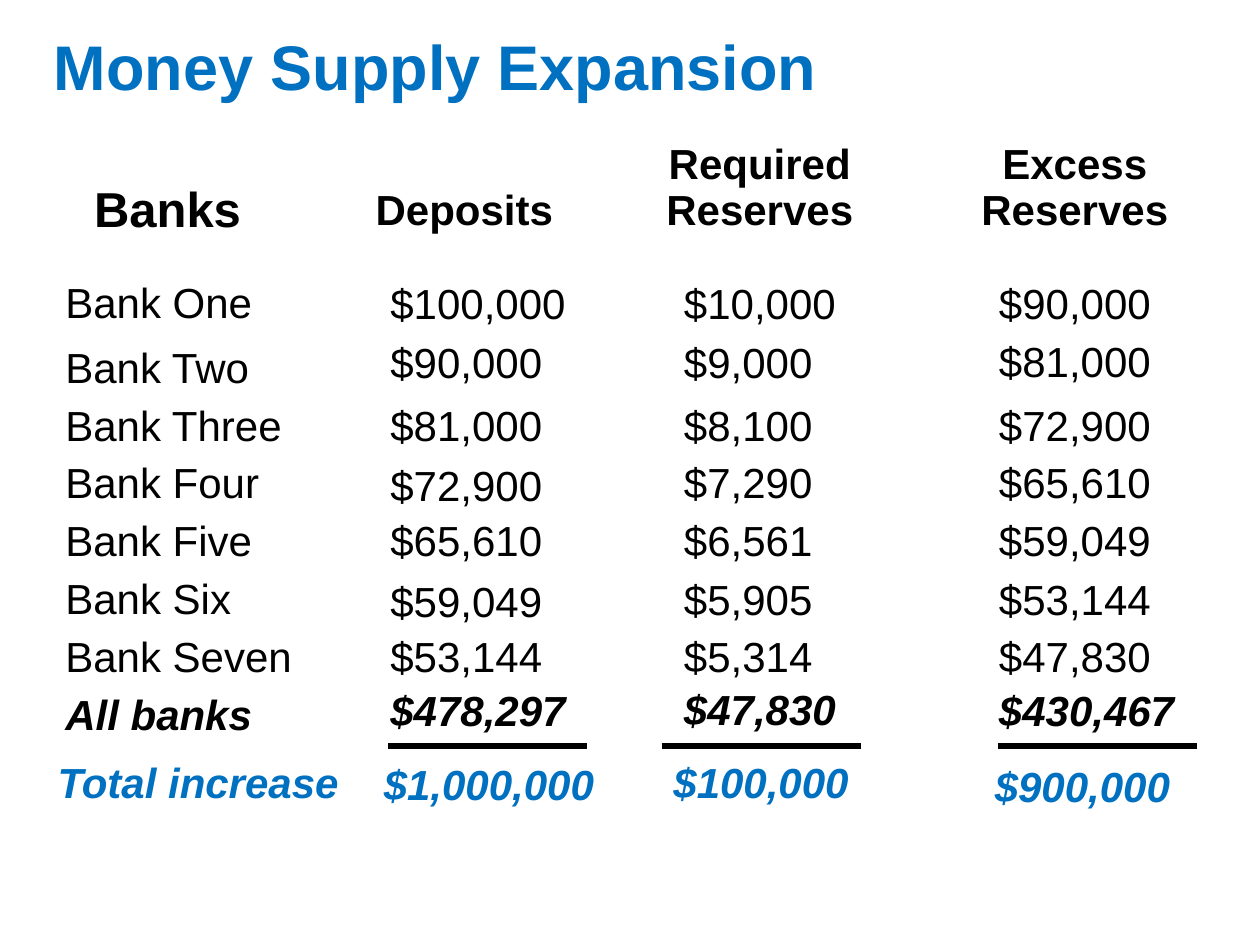
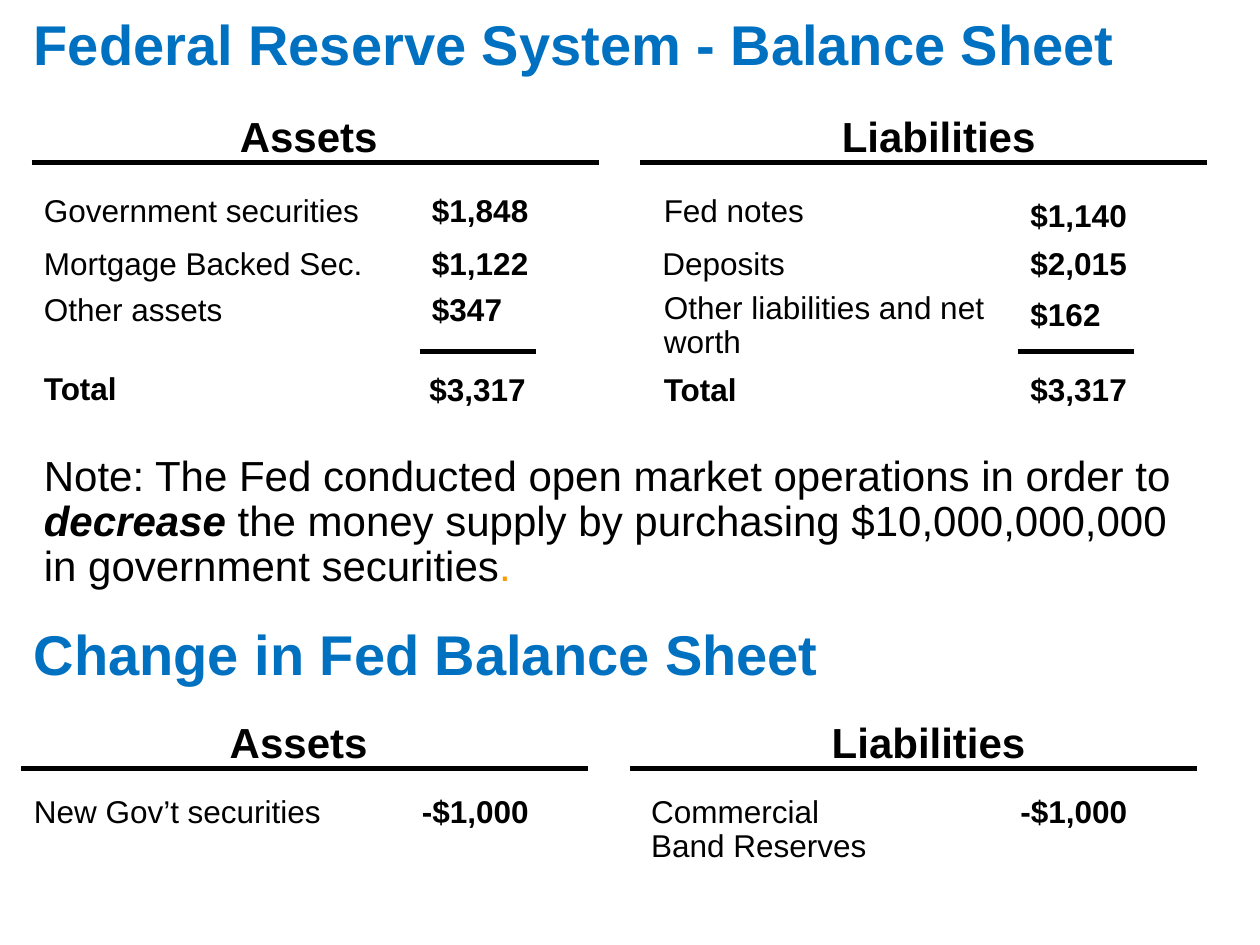
import lxml.etree
import pptx
import pptx.dml.color
import pptx.enum.shapes
import pptx.enum.text
import pptx.oxml.ns
import pptx.util

PX = 9144  # EMU per px, 100 px to the inch
FONT = "Arial"
COLORS = {"title": "0070C0", "text": "000000", "accent": "FF9900"}
ALIGN = pptx.enum.text.PP_ALIGN

# Money supply table: column left edges and widths, then rows of (text, top)
BANK_COLUMNS = [(42, 228), (300, 175), (533, 175), (783, 175)]
BANK_ROWS = [
    [("Bank One", 219), ("$100,000", 220), ("$10,000", 220), ("$90,000", 220)],
    [("Bank Two", 271), ("$90,000", 267), ("$9,000", 267), ("$81,000", 266)],
    [("Bank Three", 317), ("$81,000", 317), ("$8,100", 317), ("$72,900", 317)],
    [("Bank Four", 362), ("$72,900", 364), ("$7,290", 362), ("$65,610", 362)],
    [("Bank Five", 408), ("$65,610", 408), ("$6,561", 408), ("$59,049", 408)],
    [("Bank Six", 454), ("$59,049", 456), ("$5,905", 455), ("$53,144", 455)],
    [("Bank Seven", 500), ("$53,144", 500), ("$5,314", 500), ("$47,830", 500)],
    [("All banks", 546), ("$478,297", 543), ("$47,830", 542), ("$430,467", 543)],
]
# Text, left, top, width, size
BANK_HEADINGS = [
    ("Banks", 58, 142, 150, 28),
    ("Deposits", 262, 145, 213, 24),
    ("Required Reserves", 500, 109, 206, 24),
    ("Excess Reserves", 750, 109, 206, 24),
]
# Text, left, top, width
TOTAL_INCREASE = [
    ("Total increase", 36, 600, 272),
    ("$1,000,000", 267, 602, 242),
    ("$100,000", 508, 600, 192),
    ("$900,000", 758, 603, 202),
]

# Balance sheet entries: label, left, width, top; amount, left, top
ASSETS = [
    ("Government securities", 25, 308, 150, "$1,848", 333, 150),
    ("Mortgage Backed Sec.", 25, 308, 192, "$1,122", 333, 192),
    ("Other assets", 25, 308, 229, "$347", 333, 229),
]
LIABILITIES = [
    ("Fed notes", 517, 250, 150, "$1,140", 808, 154),
    ("Deposits", 516, 250, 192, "$2,015", 808, 192),
    ("Other liabilities and net worth", 517, 292, 227, "$162", 808, 233),
]
CHANGES = [
    ("New Gov’t securities", 17, 275, 627, "-$1,000", 325, 627),
    ("Commercial Band Reserves", 507, 201, 627, "-$1,000", 800, 627),
]
TOTALS = [
    ("Total", 25, 125, 291, "$3,317", 331, 292),
    ("Total", 517, 125, 292, "$3,317", 808, 292),
]


def add_text(page, text, left, top, width, height=46, size=24, bold=False,
             italic=False, color="text", align=ALIGN.LEFT, spacing=0.9):
    """Text is a string or a list of (string, format changes) spans."""
    box = page.shapes.add_textbox(left * PX, top * PX, width * PX, height * PX)
    frame = box.text_frame
    frame.word_wrap = True
    frame.auto_size = pptx.enum.text.MSO_AUTO_SIZE.SHAPE_TO_FIT_TEXT
    para = frame.paragraphs[0]
    para.alignment = align
    para.line_spacing = spacing
    for words, changes in [(text, {})] if isinstance(text, str) else text:
        span = para.add_run()
        span.text = words
        span.font.name = FONT
        span.font.size = pptx.util.Pt(size)
        span.font.bold = changes.get("bold", bold)
        span.font.italic = changes.get("italic", italic)
        span.font.color.rgb = pptx.dml.color.RGBColor.from_string(
            COLORS[changes.get("color", color)])


def add_title(page, text, left, top, width, size):
    add_text(page, text, left, top, width, 50, size=size, bold=True,
             color="title", spacing=0.7)


def add_rule(page, left, top, width):
    rule = page.shapes.add_connector(
        pptx.enum.shapes.MSO_CONNECTOR.STRAIGHT,
        left * PX, top * PX, (left + width) * PX, top * PX)
    rule.line.width = pptx.util.Pt(3)
    rule.line.color.rgb = pptx.dml.color.RGBColor.from_string(COLORS["text"])
    lxml.etree.SubElement(rule._element.spPr, pptx.oxml.ns.qn("a:effectLst"))


def add_account_headings(page, left, top):
    for index, heading in enumerate(["Assets", "Liabilities"]):
        add_text(page, heading, left + 91 + 500 * index, top, 258, 47,
                 bold=True, align=ALIGN.CENTER)
        add_rule(page, left + 483 * index, top + 42, 450)


def add_entries(page, entries, bold_label=False):
    for label, left, width, top, amount, amount_left, amount_top in entries:
        add_text(page, label, left, top, width, 37, size=18, bold=bold_label)
        add_text(page, amount, amount_left, amount_top, 125, 37, size=18, bold=True)


def build_money_supply(page):
    add_title(page, "Money Supply Expansion", 33, 33, 933, 36)

    # Column headings
    for text, left, top, width, size in BANK_HEADINGS:
        add_text(page, text, left, top, width, size=size, bold=True,
                 align=ALIGN.CENTER)

    # Banks, closed by the sum of all banks
    for row in BANK_ROWS:
        is_sum = row is BANK_ROWS[-1]
        for (text, top), (left, width) in zip(row, BANK_COLUMNS):
            add_text(page, text, left, top, width, bold=is_sum, italic=is_sum)
    for left in (308, 525, 792):
        add_rule(page, left, 592, 158)

    # Total increase
    for index, (text, left, top, width) in enumerate(TOTAL_INCREASE):
        add_text(page, text, left, top, width, bold=True, italic=True,
                 color="title", align=ALIGN.CENTER if index else ALIGN.LEFT)


def build_balance_sheet(page):
    # Balance sheet
    add_title(page, "Federal Reserve System - Balance Sheet", 17, 17, 908, 32)
    add_account_headings(page, 25, 87)
    add_entries(page, ASSETS + LIABILITIES)
    for left in (333, 808):
        add_rule(page, left, 279, 92)
    add_entries(page, TOTALS, bold_label=True)

    # Note
    add_text(page, [
        ("Note: The Fed conducted open market operations in order to ", {}),
        ("decrease", {"bold": True, "italic": True}),
        (" the money supply by purchasing $10,000,000,000"
         " in government securities", {}),
        (".", {"color": "accent"}),
    ], 25, 356, 917, 119)

    # Change in the balance sheet
    add_title(page, "Change in Fed Balance Sheet", 17, 501, 908, 32)
    add_account_headings(page, 17, 568)
    add_entries(page, CHANGES)


def main():
    deck = pptx.Presentation()
    deck.slide_width, deck.slide_height = 1000 * PX, 750 * PX
    for build in (build_money_supply, build_balance_sheet):
        build(deck.slides.add_slide(deck.slide_layouts[6]))
    deck.save("out.pptx")


if __name__ == "__main__":
    main()
